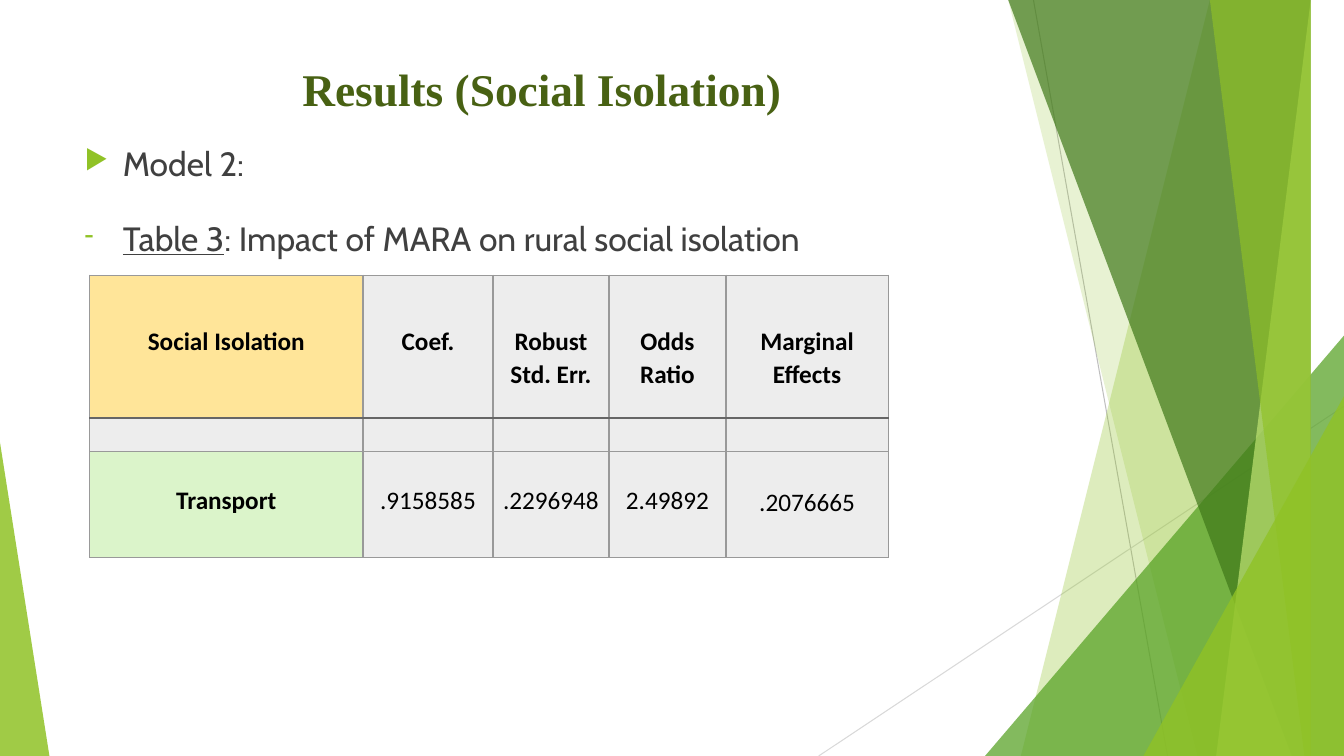
"""Build the slide on social isolation results with its green facet frame."""
from dataclasses import dataclass
from typing import Any

from lxml import etree
from pptx import Presentation
from pptx import util as u
from pptx.dml import color as c
from pptx.enum import shapes as s, text as t
from pptx.oxml import ns

WIDTH, HEIGHT = 13.33, 7.5
COLORS = {
    "lime": "90C226", "leaf": "54A021", "forest": "3F7819", "pale": "C0E474",
    "title": "486113", "body": "404040", "black": "000000",
    "gold": "FFE599", "mint": "DBF4CA", "grey": "EDEDED",
    "rule": "999999", "header_rule": "666666",
    "near_line": "BFBFBF", "far_line": "D9D9D9",
}


@dataclass(frozen=True)
class Ray:
    start: tuple[float, float]
    end: tuple[float, float]
    color: str


@dataclass(frozen=True)
class Blade:
    top: float
    bottom: float
    color: str
    opacity: int


@dataclass(frozen=True)
class Wedge:
    left: float
    top: float
    width: float
    apex: float
    color: str
    opacity: int


@dataclass(frozen=True)
class Bullet:
    mark: str
    phrases: tuple[tuple[str, bool], ...]
    settings: dict[str, Any]


@dataclass(frozen=True)
class Row:
    height: float
    texts: tuple[str, ...]
    tops: tuple[float, ...]
    label_fill: str
    bold_columns: int
    size: int = 18


RAYS = (
    Ray((10.25, 0), (11.58, HEIGHT), "near_line"),
    Ray((WIDTH, 4.03), (8.12, HEIGHT), "far_line"),
)
FACETS = (
    Blade(12.28, 10.04, "lime", 30),
    Blade(10.5, 11.83, "lime", 20),
    Wedge(9.77, 3.33, 3.56, 1, "leaf", 72),
    Blade(10.21, 12.91, "forest", 70),
    Blade(13.03, 11.92, "pale", 70),
    Blade(11.96, 13.18, "lime", 65),
    Wedge(11.34, 3.93, 1.99, 1, "lime", 80),
    Wedge(0, 4.39, 0.49, 0, "lime", 85),
)
BULLETS = (
    Bullet("▶", (("Model 2:", False),), {"space_before": u.Pt(10)}),
    Bullet("-", (("Table 3", True), (": Impact of MARA on rural social isolation", False)),
           {"space_before": u.Pt(10), "line_spacing": 1.5, "alignment": t.PP_ALIGN.JUSTIFY}),
)
COLUMNS = (2.71, 1.29, 1.15, 1.16, 1.61)
ROWS = (
    Row(1.42, ("Social Isolation", "Coef.", "Robust Std. Err.", "Odds Ratio", "Marginal Effects"),
        (0.49,) * 5, "gold", 5),
    Row(0.33, ("",) * 5, (0,) * 5, "grey", 0, 9),
    Row(1.05, ("Transport", ".9158585", ".2296948", "2.49892", ".2076665"),
        (0.32, 0.32, 0.32, 0.32, 0.34), "mint", 1),
)


def rgb(name: str) -> c.RGBColor:
    return c.RGBColor.from_string(COLORS[name])


def apply(target: Any, values: dict[str, Any]) -> None:
    for name, value in values.items():
        setattr(target, name, value)


def add_node(parent: Any, tag: str, **attributes: str) -> Any:
    return etree.SubElement(parent, ns.qn(tag), attributes)


def draw_ray(page: Any, ray: Ray) -> None:
    ends = [u.Inches(value) for value in (*ray.start, *ray.end)]
    line = page.shapes.add_connector(s.MSO_CONNECTOR.STRAIGHT, *ends)
    line.line.color.rgb = rgb(ray.color)
    line.line.width = u.Pt(0.75)
    add_node(line._element.spPr, "a:effectLst")


def draw_facet(page: Any, facet: Blade | Wedge) -> None:
    if isinstance(facet, Blade):
        outline = page.shapes.build_freeform(facet.top, 0, scale=u.Inches(1))
        outline.add_line_segments([(WIDTH, 0), (WIDTH, HEIGHT), (facet.bottom, HEIGHT)])
        shape = outline.convert_to_shape()
    else:
        frame = (facet.left, facet.top, facet.width, HEIGHT - facet.top)
        shape = page.shapes.add_shape(s.MSO_SHAPE.ISOSCELES_TRIANGLE, *map(u.Inches, frame))
        shape.adjustments[0] = facet.apex
    shape.shadow.inherit = False
    shape.line.fill.background()
    shape.fill.solid()
    shape.fill.fore_color.rgb = rgb(facet.color)
    tint = shape._element.spPr.find(f"{ns.qn('a:solidFill')}/{ns.qn('a:srgbClr')}")
    add_node(tint, "a:alpha", val=str(facet.opacity * 1000))


def add_span(para: Any, content: str, color: str, values: dict[str, Any]) -> None:
    span = para.add_run()
    span.text = content
    apply(span.font, values)
    span.font.color.rgb = rgb(color)


def add_box(page: Any, *frame: float) -> Any:
    box = page.shapes.add_textbox(*map(u.Inches, frame)).text_frame
    box.word_wrap = True
    return box


def draw_title(page: Any) -> None:
    box = add_box(page, 2.9, 0.52, 5.08, 0.85)
    box.margin_top = u.Inches(0.09)
    add_span(box.paragraphs[0], "Results (Social Isolation)", "title",
             {"name": "Times New Roman", "size": u.Pt(32.4), "bold": True})


def draw_bullets(page: Any) -> None:
    box = add_box(page, 0.74, 1.37, 9.4, 5.23)
    for index, bullet in enumerate(BULLETS):
        para = box.add_paragraph() if index else box.paragraphs[0]
        apply(para, bullet.settings)
        layout = para._p.get_or_add_pPr()
        indent = u.Inches(0.38)
        layout.set("marL", str(indent))
        layout.set("indent", str(-indent))
        add_node(add_node(layout, "a:buClr"), "a:srgbClr", val=COLORS["lime"])
        add_node(layout, "a:buSzPct", val="80000")
        add_node(layout, "a:buChar", char=bullet.mark)
        for content, underline in bullet.phrases:
            add_span(para, content, "body",
                     {"name": "Cabin", "size": u.Pt(24), "underline": underline})


def draw_borders(cell: Any, row_index: int) -> None:
    heavy_side = {0: "B", 1: "T"}.get(row_index)
    layout = cell._tc.get_or_add_tcPr()
    for order, side in enumerate("LRTB"):
        name, points = ("header_rule", 1.5) if side == heavy_side else ("rule", 1)
        border = add_node(layout, f"a:ln{side}", w=str(u.Pt(points)))
        add_node(add_node(border, "a:solidFill"), "a:srgbClr", val=COLORS[name])
        layout.insert(order, border)


def draw_table(page: Any) -> None:
    frame = (0.89, 2.73, sum(COLUMNS), sum(row.height for row in ROWS))
    table = page.shapes.add_table(len(ROWS), len(COLUMNS), *map(u.Inches, frame)).table
    apply(table, {"first_row": False, "horz_banding": False})
    for column, width in zip(table.columns, COLUMNS):
        column.width = u.Inches(width)
    for row_index, row in enumerate(ROWS):
        table.rows[row_index].height = u.Inches(row.height)
        for index, (content, top) in enumerate(zip(row.texts, row.tops)):
            cell = table.cell(row_index, index)
            apply(cell, {"margin_left": u.Inches(0.07), "margin_right": u.Inches(0.07),
                         "margin_top": u.Inches(top), "margin_bottom": 0})
            cell.fill.solid()
            cell.fill.fore_color.rgb = rgb("grey" if index else row.label_fill)
            draw_borders(cell, row_index)
            para = cell.text_frame.paragraphs[0]
            apply(para, {"alignment": t.PP_ALIGN.CENTER, "line_spacing": 1.07})
            para.font.size = u.Pt(row.size)
            if content:
                add_span(para, content, "black",
                         {"name": "Calibri", "size": u.Pt(row.size),
                          "bold": index < row.bold_columns})
            else:
                add_node(para._p, "a:endParaRPr", sz=str(row.size * 100))


def main() -> None:
    deck = Presentation()
    apply(deck, {"slide_width": u.Inches(WIDTH), "slide_height": u.Inches(HEIGHT)})
    page = deck.slides.add_slide(deck.slide_layouts[6])
    for ray in RAYS:
        draw_ray(page, ray)
    for facet in FACETS:
        draw_facet(page, facet)
    draw_title(page)
    draw_bullets(page)
    draw_table(page)
    deck.save("out.pptx")


if __name__ == "__main__":
    main()
